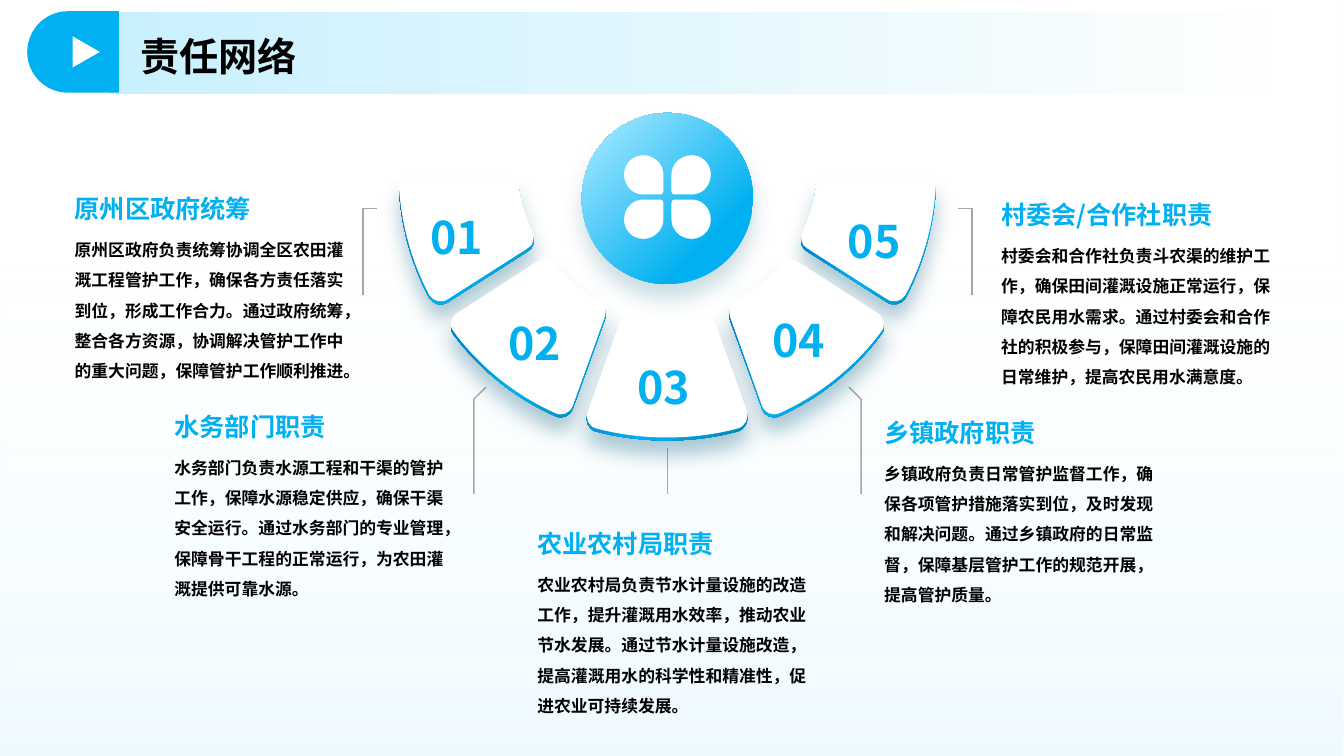
from lxml import etree
from pptx import Presentation
from pptx import util as u
from pptx.dml.color import RGBColor
from pptx.enum import shapes, text
from pptx.oxml import parse_xml
from pptx.oxml.ns import nsdecls, qn

BLUE = RGBColor(0x00, 0xB0, 0xF0)
DEEP_BLUE = RGBColor(0x00, 0x70, 0xC0)
EDGE_BLUE = RGBColor(0x00, 0x84, 0xB4)
SKY = RGBColor(0x93, 0xE2, 0xFF)
PALE = RGBColor(0xC9, 0xF1, 0xFF)
SHADOW = RGBColor(0x00, 0x58, 0x78)
GREY = RGBColor(0xA6, 0xA6, 0xA6)
WHITE = RGBColor(0xFF, 0xFF, 0xFF)
BLACK = RGBColor(0x00, 0x00, 0x00)

FONT = "Noto Sans CJK SC"
AXIS = 6.62          # vertical mirror line of the fan
PETAL_AXIS = 1.955   # horizontal mirror line of the clover
EDGE = 0.03          # visible thickness under each wedge
BODY_DROP = 0.74     # from heading top to body top
CORNER = '<a:path path="circle"><a:fillToRect r="100000" b="100000"/></a:path>'

# Outlines: a pair is a line to a point, six values are a Bezier curve
WEDGE_OUTER = [
    (5.03, 1.75), (4.08, 1.75), (4.01, 1.75, 3.95, 1.81, 3.96, 1.89),
    (3.99, 2.26, 4.09, 2.61, 4.26, 2.93), (4.3, 2.99, 4.38, 3.01, 4.44, 2.97),
    (5.24, 2.46), (5.29, 2.43, 5.31, 2.36, 5.28, 2.3),
    (5.22, 2.17, 5.17, 2.02, 5.15, 1.86), (5.14, 1.8, 5.09, 1.75, 5.03, 1.75)]
WEDGE_INNER = [
    (5.32, 2.6), (4.53, 3.11), (4.47, 3.15, 4.45, 3.23, 4.5, 3.29),
    (4.76, 3.64, 5.11, 3.92, 5.51, 4.1), (5.58, 4.13, 5.65, 4.1, 5.68, 4.03),
    (6, 3.14), (6.02, 3.08, 6, 3.01, 5.94, 2.98),
    (5.77, 2.89, 5.61, 2.77, 5.49, 2.62), (5.45, 2.57, 5.38, 2.56, 5.32, 2.6)]
WEDGE_MIDDLE = [
    (6.62, 3.15), (6.51, 3.15, 6.4, 3.14, 6.3, 3.11),
    (6.23, 3.1, 6.17, 3.13, 6.15, 3.19), (5.83, 4.08),
    (5.8, 4.15, 5.84, 4.23, 5.91, 4.25), (6.14, 4.31, 6.37, 4.34, 6.62, 4.34),
    (6.86, 4.34, 7.1, 4.31, 7.32, 4.25), (7.39, 4.23, 7.43, 4.15, 7.41, 4.08),
    (7.09, 3.19), (7.07, 3.13, 7, 3.1, 6.94, 3.11),
    (6.84, 3.14, 6.73, 3.15, 6.62, 3.15)]
PETAL = [
    (6.55, 1.93), (6.38, 1.93), (6.27, 1.93, 6.19, 1.84, 6.19, 1.73),
    (6.19, 1.63, 6.27, 1.54, 6.38, 1.54), (6.49, 1.54, 6.58, 1.63, 6.58, 1.73),
    (6.58, 1.9), (6.58, 1.92, 6.56, 1.93, 6.55, 1.93)]
BRACKETS = [[(3.6, 2.93), (3.6, 2.07), (3.74, 2.07)],
            [(4.7, 4.9), (4.7, 3.96), (4.82, 3.84)]]

NUMBERS = [("01", 4.17, 1.98), ("02", 4.94, 3.03), ("03", 6.22, 3.47),
           ("04", 7.56, 3.0), ("05", 8.31, 2.02)]
DUTIES = [
    (0.74, 1.54, "原州区政府统筹",
     "原州区政府负责统筹协调全区农田灌溉工程管护工作，确保各方责任落实到位，形成工作合力。"
     "通过政府统筹，整合各方资源，协调解决管护工作中的重大问题，保障管护工作顺利推进。"),
    (1.73, 3.7, "水务部门职责",
     "水务部门负责水源工程和干渠的管护工作，保障水源稳定供应，确保干渠安全运行。"
     "通过水务部门的专业管理，保障骨干工程的正常运行，为农田灌溉提供可靠水源。"),
    (5.33, 4.86, "农业农村局职责",
     "农业农村局负责节水计量设施的改造工作，提升灌溉用水效率，推动农业节水发展。"
     "通过节水计量设施改造，提高灌溉用水的科学性和精准性，促进农业可持续发展。"),
    (8.77, 3.76, "乡镇政府职责",
     "乡镇政府负责日常管护监督工作，确保各项管护措施落实到位，及时发现和解决问题。"
     "通过乡镇政府的日常监督，保障基层管护工作的规范开展，提高管护质量。"),
    (9.93, 1.6, "村委会/合作社职责",
     "村委会和合作社负责斗农渠的维护工作，确保田间灌溉设施正常运行，保障农民用水需求。"
     "通过村委会和合作社的积极参与，保障田间灌溉设施的日常维护，提高农民用水满意度。"),
]


def set_format(target, values):
    for name, value in values.items():
        setattr(target, name, value)


def mirror(outline, flips=(True, False)):
    axes = (AXIS, PETAL_AXIS)
    return [tuple(2 * axes[i % 2] - value if flips[i % 2] else value
                  for i, value in enumerate(part)) for part in outline]


def paint(shape, color=WHITE, stops=None, direction=CORNER, shadow_alpha=None):
    """Give a flat fill, or gradient stops of (position, colour, opacity)."""
    shape.line.fill.background()
    shape.shadow.inherit = False
    shape.fill.solid()
    shape.fill.fore_color.rgb = color
    properties = shape._element.spPr
    if stops:
        marks = "".join(
            f'<a:gs pos="{place * 1000}"><a:srgbClr val="{tint}">'
            f'<a:alpha val="{opacity * 1000}"/></a:srgbClr></a:gs>'
            for place, tint, opacity in stops)
        properties.replace(properties.find(qn("a:solidFill")), parse_xml(
            f'<a:gradFill {nsdecls("a")} rotWithShape="1"><a:gsLst>{marks}</a:gsLst>'
            f'{direction}</a:gradFill>'))
    if shadow_alpha:
        properties.find(qn("a:effectLst")).append(parse_xml(
            f'<a:outerShdw {nsdecls("a")} blurRad="{u.Pt(15)}" dist="{u.Pt(10)}" '
            f'dir="5400000" algn="t" rotWithShape="0"><a:srgbClr val="{SHADOW}">'
            f'<a:alpha val="{shadow_alpha * 1000}"/></a:srgbClr></a:outerShdw>'))


def add_preset(page, kind, frame, rotation=0, **look):
    shape = page.shapes.add_shape(kind, *map(u.Inches, frame))
    shape.rotation = rotation
    paint(shape, **look)
    return shape


def add_outline(page, contours, close=True, drop=0):
    """Draw contours through all their points, then bend the curved parts."""
    builder = None
    for outline in contours:
        points = [(round(x * 1000), round((y + drop) * 1000))
                  for part in outline for x, y in zip(part[::2], part[1::2])]
        if builder is None:
            builder = page.shapes.build_freeform(*points[0], scale=u.Inches(1) / 1000)
        else:
            builder.move_to(*points[0])
        builder.add_line_segments(points[1:], close=close)
    shape = builder.convert_to_shape()
    lines = iter(list(shape._element.iter(qn("a:lnTo"))))
    for part in (part for outline in contours for part in outline[1:]):
        first = next(lines)
        if len(part) == 6:
            curve = first.makeelement(qn("a:cubicBezTo"))
            first.addprevious(curve)
            for line in (first, next(lines), next(lines)):
                curve.append(line[0])
                line.getparent().remove(line)
    return shape


def style_line(shape):
    shape.line.width = u.Pt(1)
    shape.line.color.rgb = GREY


def add_text(page, words, frame, size, color, spacing, anchor="TOP", inset=0):
    box = page.shapes.add_textbox(*map(u.Inches, frame))
    set_format(box.text_frame, {
        "word_wrap": True, "vertical_anchor": getattr(text.MSO_ANCHOR, anchor),
        "margin_left": u.Inches(inset), "margin_right": u.Inches(inset),
        "margin_top": u.Inches(inset / 2), "margin_bottom": u.Inches(inset / 2)})
    para = box.text_frame.paragraphs[0]
    set_format(para, {"alignment": text.PP_ALIGN.JUSTIFY, "line_spacing": spacing})
    span = para.add_run()
    span.text = words
    set_format(span.font, {"size": u.Pt(size), "bold": True, "name": FONT})
    span.font.color.rgb = color
    etree.SubElement(span._r.get_or_add_rPr(), qn("a:ea"), typeface=FONT)


def main():
    deck = Presentation()
    set_format(deck, {"slide_width": u.Inches(13.33), "slide_height": u.Inches(7.5)})
    page = deck.slides.add_slide(deck.slide_layouts[6])
    preset = shapes.MSO_SHAPE

    # Background wash
    add_preset(page, preset.RECTANGLE, (0, 0, 13.33, 7.5),
               stops=[(35, PALE, 0), (100, SKY, 15)],
               direction='<a:lin ang="5400000" scaled="0"/>')

    # Leader lines
    for bracket in BRACKETS:
        for outline in (bracket, mirror(bracket)):
            leader = add_outline(page, [outline], close=False)
            leader.fill.background()
            leader.shadow.inherit = False
            style_line(leader)
    stem = page.shapes.add_connector(shapes.MSO_CONNECTOR.STRAIGHT, *map(
        u.Inches, (AXIS, 4.44, AXIS, 4.9)))
    style_line(stem)
    etree.SubElement(stem._element.spPr, qn("a:effectLst"))

    # Fan of wedges: blue edges below, white faces above
    wedges = [WEDGE_MIDDLE, WEDGE_INNER, mirror(WEDGE_INNER),
              mirror(WEDGE_OUTER), WEDGE_OUTER]
    edge_look = {"stops": [(13, DEEP_BLUE, 100), (62, BLUE, 100), (100, EDGE_BLUE, 100)],
                 "shadow_alpha": 32}
    for drop, look in ((EDGE, edge_look), (0, {"color": WHITE})):
        for wedge in wedges:
            paint(add_outline(page, [wedge], drop=drop), **look)
    for number, left, top in NUMBERS:
        add_text(page, number, (left, top, 0.79, 0.57), 32, BLUE, 1.1, inset=0.1)

    # Hub with clover
    add_preset(page, preset.OVAL, (5.77, 1.12, 1.7, 1.7),
               stops=[(13, SKY, 100), (75, BLUE, 100)], shadow_alpha=20)
    clover = [mirror(PETAL, (flip_x, flip_y))
              for flip_y in (False, True) for flip_x in (False, True)]
    paint(add_outline(page, clover))

    # Duties
    for left, top, heading, body in DUTIES:
        add_text(page, body, (left, top + BODY_DROP, 2.67, 1.17), 12, BLACK, 1.5)
        add_text(page, heading, (left, top, 2.67, 0.68), 18, BLUE, 1.3, "BOTTOM")

    # Title bar
    add_preset(page, preset.ROUNDED_RECTANGLE, (1, 0.12, 11.6, 0.81),
               stops=[(0, PALE, 100), (100, PALE, 0)],
               direction='<a:lin ang="0" scaled="0"/>')
    add_text(page, "责任网络", (1.39, 0.26, 8.51, 0.54), 28, BLACK, 1.1, "MIDDLE")
    tab = add_preset(page, preset.ROUND_2_SAME_RECTANGLE, (0.32, 0.06, 0.81, 0.91),
                     rotation=270, color=BLUE)
    tab.adjustments[0] = 0.5
    add_preset(page, preset.ISOSCELES_TRIANGLE, (0.7, 0.38, 0.31, 0.27),
               rotation=90, color=WHITE)

    deck.save("out.pptx")


if __name__ == "__main__":
    main()
